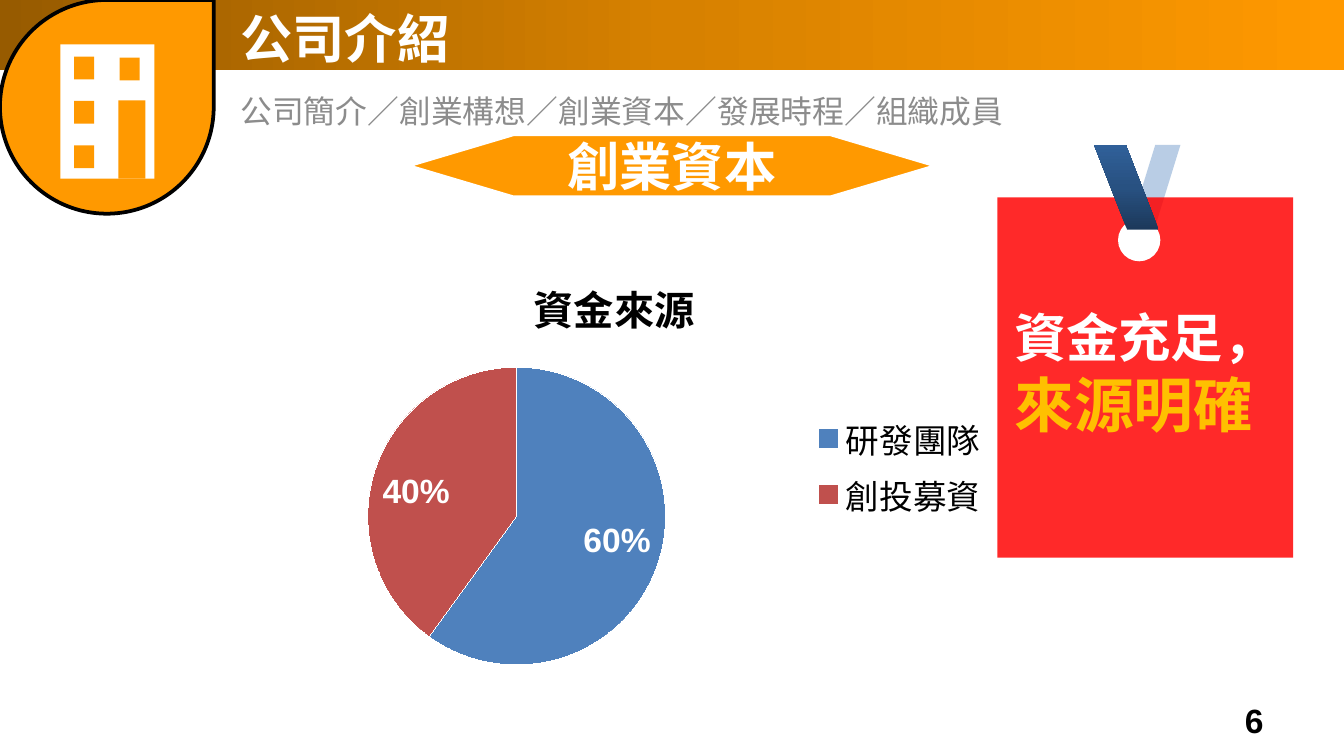
from copy import deepcopy

from pptx import Presentation
from pptx.chart.data import CategoryChartData
from pptx.dml.color import RGBColor
from pptx.enum.chart import XL_CHART_TYPE, XL_LABEL_POSITION, XL_LEGEND_POSITION
from pptx.enum.shapes import MSO_SHAPE
from pptx.enum.text import MSO_ANCHOR, MSO_AUTO_SIZE, PP_ALIGN
from pptx.oxml.ns import qn
from pptx.oxml.xmlchemy import OxmlElement
from pptx.util import Cm, Pt

RECTANGLE = MSO_SHAPE.RECTANGLE
PARALLELOGRAM = MSO_SHAPE.PARALLELOGRAM
LEFT, CENTER, RIGHT = PP_ALIGN.LEFT, PP_ALIGN.CENTER, PP_ALIGN.RIGHT
TOP, MIDDLE = MSO_ANCHOR.TOP, MSO_ANCHOR.MIDDLE
FONT = "Arial"
ORANGE, WHITE, BLACK = "FF9900", "FFFFFF", "000000"


def color(hex_string):
    return RGBColor.from_string(hex_string)


def style_font(font, size, hex_string, bold=False):
    font.name = FONT
    font.size = Pt(size)
    font.color.rgb = color(hex_string)
    font.bold = bold


def add_shape(slide, kind, box, fill=None, line=None):
    """Add a flat shape; box is left, top, width, height in centimetres."""
    shape = slide.shapes.add_shape(kind, *map(Cm, box))
    shape.shadow.inherit = False
    if fill:
        shape.fill.solid()
        shape.fill.fore_color.rgb = color(fill)
    if line:
        shape.line.color.rgb = color(line)
        shape.line.width = Pt(2)
    else:
        shape.line.fill.background()
    return shape


def set_gradient(shape, stops, angle):
    """Fill with evenly spaced color stops; angle runs counter-clockwise."""
    shape.fill.gradient()
    shape.fill.gradient_angle = angle
    stop_list = shape._element.spPr.find(qn("a:gradFill")).find(qn("a:gsLst"))
    while len(stop_list) < len(stops):
        stop_list.append(deepcopy(stop_list[0]))
    for index, (stop, hex_string) in enumerate(zip(shape.fill.gradient_stops, stops)):
        stop.position = index / (len(stops) - 1)
        stop.color.rgb = color(hex_string)


def set_opacity(shape, percent):
    alpha = OxmlElement("a:alpha")
    alpha.set("val", str(percent * 1000))
    shape._element.spPr.find(qn("a:solidFill"))[0].append(alpha)


def write_text(shape, lines, align=LEFT, anchor=TOP):
    """Write one paragraph per (text, size, color, bold) line."""
    frame = shape.text_frame
    frame.text = "\n".join(line[0] for line in lines)
    frame.word_wrap = True
    frame.auto_size = MSO_AUTO_SIZE.NONE
    frame.vertical_anchor = anchor
    for paragraph, (_, size, hex_string, bold) in zip(frame.paragraphs, lines):
        paragraph.alignment = align
        style_font(paragraph.runs[0].font, size, hex_string, bold)


def add_text(slide, box, lines, align=LEFT, anchor=TOP):
    write_text(slide.shapes.add_textbox(*map(Cm, box)), lines, align, anchor)


def fill_placeholder(slide, placeholder, box, line):
    """Place the placeholder in front of the shapes and write one plain line."""
    placeholder.left, placeholder.top, placeholder.width, placeholder.height = map(Cm, box)
    write_text(placeholder, [line])
    properties = placeholder.text_frame.paragraphs[0]._p.get_or_add_pPr()
    properties.set("marL", "0")
    properties.set("indent", "0")
    properties.append(OxmlElement("a:buNone"))
    slide.shapes._spTree.append(placeholder._element)


def add_header(slide):
    bar = add_shape(slide, RECTANGLE, (0, 0, 25.4, 1.32))
    set_gradient(bar, ["975B00", "D78100", ORANGE], 0)
    add_shape(slide, MSO_SHAPE.TEAR, (0, 0, 4.04, 4.04), ORANGE, BLACK)
    add_shape(slide, RECTANGLE, (1.14, 0.84, 1.78, 2.54), WHITE)
    windows = [(1.4, 1.07 + 0.84 * floor) for floor in range(3)] + [(2.26, 1.09)]
    for left, top in windows:
        add_shape(slide, RECTANGLE, (left, top, 0.38, 0.43), ORANGE)
    add_shape(slide, RECTANGLE, (2.24, 1.9, 0.51, 1.48), ORANGE)
    fill_placeholder(slide, slide.shapes.title, (4.29, 0, 5.21, 1.45),
                     ("公司介紹", 28, WHITE, True))
    fill_placeholder(slide, slide.placeholders[1], (4.29, 1.6, 15.01, 0.94),
                     ("公司簡介／創業構想／創業資本／發展時程／組織成員", 17, "8C8C8C", False))
    banner = add_shape(slide, MSO_SHAPE.FLOWCHART_PREPARATION,
                       (7.7, 2.54, 10, 1.19), ORANGE, WHITE)
    write_text(banner, [("創業資本", 28, WHITE, True)], CENTER, MIDDLE)


def add_funding_chart(slide):
    data = CategoryChartData()
    data.categories = ["研發團隊", "創投募資"]
    data.add_series("資金來源", (60, 40))
    box = map(Cm, (4.27, 4.72, 14.68, 8.2))
    chart = slide.shapes.add_chart(XL_CHART_TYPE.PIE, *box, data).chart
    style_font(chart.font, 18, BLACK)

    chart.has_title = True
    chart.chart_title.text_frame.text = "資金來源"
    title_run = chart.chart_title.text_frame.paragraphs[0].runs[0]
    style_font(title_run.font, 21.6, BLACK, True)

    chart.has_legend = True
    chart.legend.position = XL_LEGEND_POSITION.RIGHT
    chart.legend.include_in_layout = False

    plot = chart.plots[0]
    plot.vary_by_categories = True
    for index, hex_string in enumerate(["4F81BD", "C0504D"]):
        slice_format = plot.series[0].points[index].format
        slice_format.fill.solid()
        slice_format.fill.fore_color.rgb = color(hex_string)
        slice_format.line.color.rgb = color(WHITE)
    plot.has_data_labels = True
    labels = plot.data_labels
    labels.show_percentage = True
    labels.show_value = False
    labels.number_format = "0%"
    labels.number_format_is_linked = False
    labels.position = XL_LABEL_POSITION.INSIDE_END
    style_font(labels.font, 18, WHITE, True)


def add_tag(slide):
    back_strap = add_shape(slide, PARALLELOGRAM, (21.34, 2.74, 0.97, 1.6), "B9CDE5")
    card = add_shape(slide, RECTANGLE, (18.85, 3.73, 5.59, 6.81), "FF0000")
    set_opacity(card, 84)
    add_shape(slide, MSO_SHAPE.OVAL, (21.13, 4.14, 0.8, 0.8), WHITE)
    front_strap = add_shape(slide, PARALLELOGRAM, (20.68, 2.74, 1.22, 1.6))
    set_gradient(front_strap, ["1C395B", "285181", "306099"], 90)
    front_strap._element.spPr.find(qn("a:xfrm")).set("flipH", "1")
    for strap in (back_strap, front_strap):
        strap.adjustments[0] = 0.51
    add_text(slide, (18.92, 5.64, 5.59, 2.82),
             [("資金充足，", 28, WHITE, True), ("來源明確", 32, "FFC000", True)])


def main():
    presentation = Presentation()
    presentation.slide_width = Cm(25.4)
    presentation.slide_height = Cm(14.29)
    slide = presentation.slides.add_slide(presentation.slide_layouts[1])
    add_header(slide)
    add_funding_chart(slide)
    add_tag(slide)
    add_text(slide, (18.21, 13.23, 5.92, 0.76), [("6", 18, BLACK, True)], RIGHT, MIDDLE)
    presentation.save("out.pptx")


if __name__ == "__main__":
    main()
